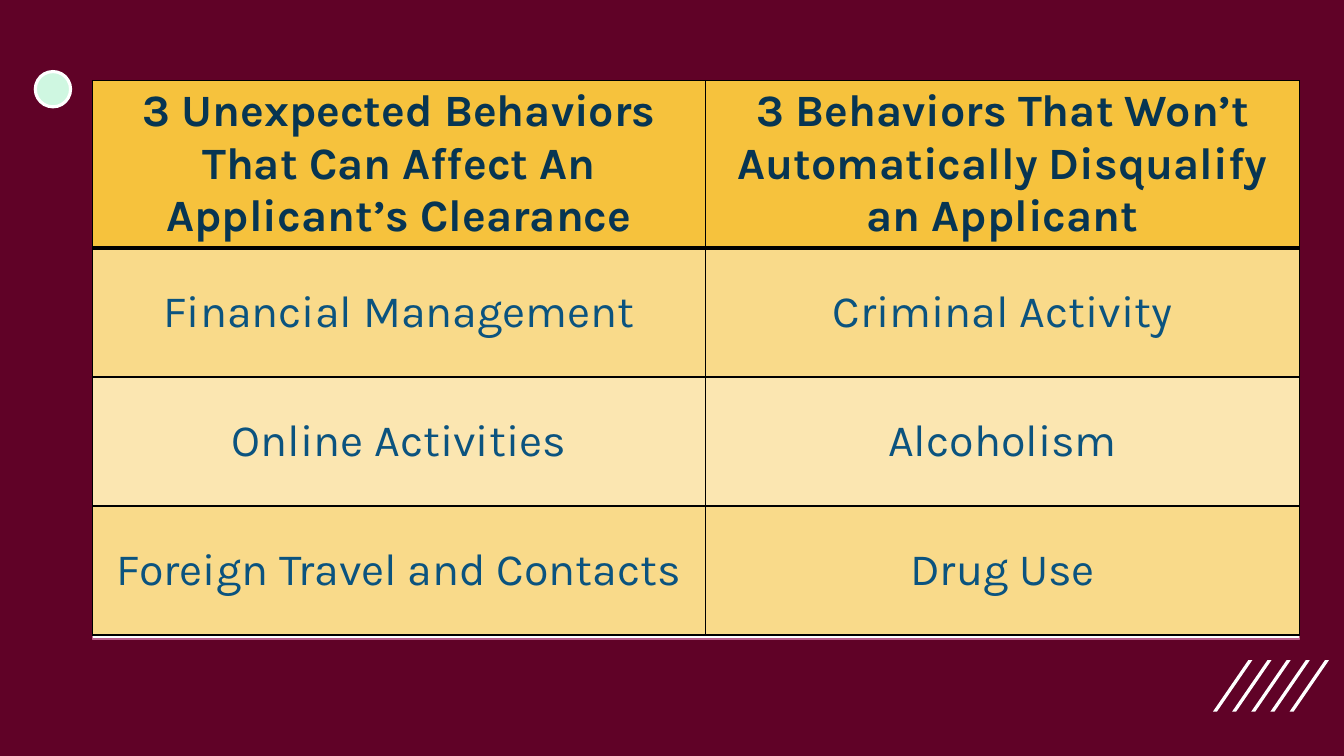
from lxml import etree
from pptx import Presentation
from pptx.dml.color import RGBColor
from pptx.enum.shapes import MSO_SHAPE
from pptx.enum.text import MSO_ANCHOR, PP_ALIGN
from pptx.oxml.ns import qn
from pptx.util import Inches, Pt

RECTANGLE, OVAL = MSO_SHAPE.RECTANGLE, MSO_SHAPE.OVAL
CENTER, MIDDLE = PP_ALIGN.CENTER, MSO_ANCHOR.MIDDLE

COLORS = {
    "background": "600227", "white": "FFFFFF", "mint": "CFF7E1", "pink": "BD5F8C",
    "gold": "F6C23D", "navy": "073552", "blue": "0B537F", "black": "000000",
}
BEHAVIORS = [
    ("3 Unexpected Behaviors That Can Affect An Applicant’s Clearance",
     "3 Behaviors That Won’t Automatically Disqualify an Applicant"),
    ("Financial Management", "Criminal Activity"),
    ("Online Activities", "Alcoholism"),
    ("Foreign Travel and Contacts", "Drug Use"),
]
COLUMN_WIDTHS = [6.08, 5.89]
ROW_HEIGHTS = [1.58, 1.28, 1.28, 1.28]
ROW_OPACITY = [100, 60, 40, 60]
TABLE_BOX = (0.92, 0.8, 11.97, 5.54)


def color(name):
    return RGBColor.from_string(COLORS[name])


def write(frame, text, *, size=32, font="Karla", ink="blue", bold=False, align=CENTER):
    para = frame.paragraphs[0]
    para.alignment = align
    span = para.add_run()
    span.text = text
    span.font.size, span.font.name, span.font.bold = Pt(size), font, bold
    span.font.color.rgb = color(ink)


class SlideBuilder:
    def __init__(self, page):
        self.page = page

    def background(self, fill):
        self.page.background.fill.solid()
        self.page.background.fill.fore_color.rgb = color(fill)

    def paint(self, shape, fill, line=None, width=1):
        shape.shadow.inherit = False
        shape.fill.solid()
        shape.fill.fore_color.rgb = color(fill)
        if line:
            shape.line.color.rgb = color(line)
            shape.line.width = Pt(width)
        else:
            shape.line.fill.background()

    def shape(self, kind, box, fill, line, width):
        shape = self.page.shapes.add_shape(kind, *map(Inches, box))
        self.paint(shape, fill, line, width)

    def slash(self, left, top, width, height, thickness, fill):
        right, bottom = left + width, top + height
        outline = self.page.shapes.build_freeform(
            Inches(left + thickness), Inches(bottom), scale=1.0)
        corners = [(left, bottom), (right - thickness, top), (right, top)]
        outline.add_line_segments([(Inches(x), Inches(y)) for x, y in corners])
        self.paint(outline.convert_to_shape(), fill)

    def borders(self, cell, bottom_width):
        properties = cell._tc.get_or_add_tcPr()
        widths = {"a:lnL": 1, "a:lnR": 1, "a:lnT": 1, "a:lnB": bottom_width}
        for position, (side, width) in enumerate(widths.items()):
            line = etree.Element(qn(side), w=str(Pt(width)))
            solid = etree.SubElement(line, qn("a:solidFill"))
            etree.SubElement(solid, qn("a:srgbClr"), val=COLORS["black"])
            properties.insert(position, line)

    def cell_fill(self, cell, fill, opacity):
        cell.fill.solid()
        cell.fill.fore_color.rgb = color(fill)
        if opacity < 100:
            tone = cell._tc.tcPr.find(qn("a:solidFill")).find(qn("a:srgbClr"))
            etree.SubElement(tone, qn("a:alpha"), val=str(opacity * 1000))

    def table(self, box, rows):
        table = self.page.shapes.add_table(
            len(rows), len(COLUMN_WIDTHS), *map(Inches, box)).table
        for column, width in zip(table.columns, COLUMN_WIDTHS):
            column.width = Inches(width)
        for index, texts in enumerate(rows):
            header = index == 0
            table.rows[index].height = Inches(ROW_HEIGHTS[index])
            for cell, text in zip(table.rows[index].cells, texts):
                cell.vertical_anchor = MIDDLE
                self.cell_fill(cell, "gold", ROW_OPACITY[index])
                self.borders(cell, 3 if header else 1)
                if index == 1:
                    # The line under the header is shared by both rows
                    cell._tc.tcPr.find(qn("a:lnT")).set("w", str(Pt(3)))
                write(cell.text_frame, text, bold=header,
                      ink="navy" if header else "blue")


def main():
    deck = Presentation()
    deck.slide_width, deck.slide_height = Inches(13.33), Inches(7.5)
    builder = SlideBuilder(deck.slides.add_slide(deck.slide_layouts[6]))
    builder.background("background")

    # Corner decorations
    for index in range(5):
        builder.slash(12.03 + 0.19 * index, 6.55, 0.39, 0.51, 0.04, "white")
    builder.shape(OVAL, (0.35, 0.71, 0.35, 0.35), "mint", "white", 2.25)

    # Behavior table on its white panel
    builder.shape(RECTANGLE, TABLE_BOX, "white", "pink", 1)
    builder.table(TABLE_BOX, BEHAVIORS)

    deck.save("out.pptx")


if __name__ == "__main__":
    main()
